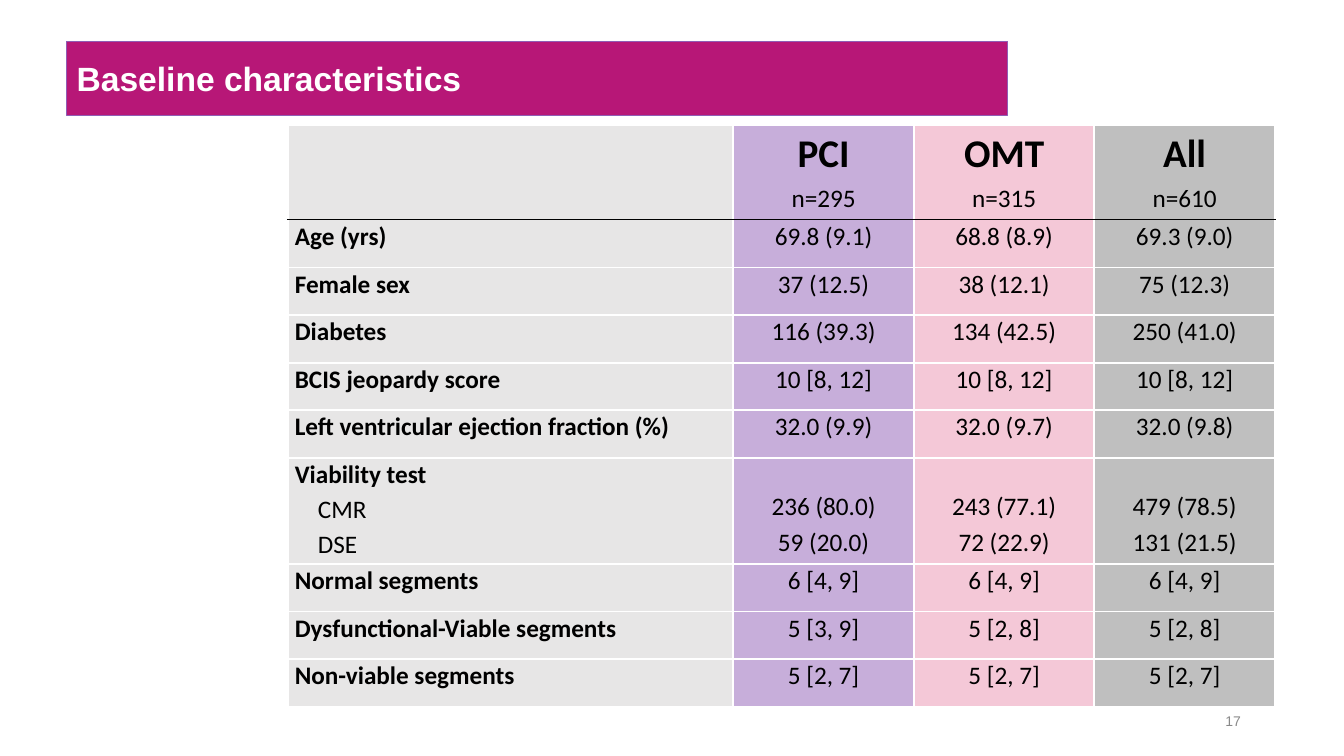
from lxml import etree
from pptx import Presentation
from pptx import util as u
from pptx.dml.color import RGBColor
from pptx.enum import text
from pptx.oxml.ns import qn

COLOURS = {
    "title": "B71777", "title_line": "8F5DB5", "white": "FFFFFF",
    "black": "000000", "number": "898989", "label": "E7E6E6",
    "pci": "C7AEDA", "omt": "F4C8D7", "all": "BFBFBF",
}
COLUMN_FILLS = ["label", "pci", "omt", "all"]
COLUMN_WIDTHS = [11.23, 4.55, 4.55, 4.55]
HEADER_HEIGHT, ROW_HEIGHT, VIABILITY_HEIGHT = 2.39, 1.2, 2.67

HEADER = ["", "PCI\nn=295", "OMT\nn=315", "All\nn=610"]
ROWS = [
    ["Age (yrs)", "69.8 (9.1)", "68.8 (8.9)", "69.3 (9.0)"],
    ["Female sex", "37 (12.5)", "38 (12.1)", "75 (12.3)"],
    ["Diabetes", "116 (39.3)", "134 (42.5)", "250 (41.0)"],
    ["BCIS jeopardy score", "10 [8, 12]", "10 [8, 12]", "10 [8, 12]"],
    ["Left ventricular ejection fraction (%)", "32.0 (9.9)", "32.0 (9.7)", "32.0 (9.8)"],
    ["Viability test\nCMR\nDSE", "236 (80.0)\n59 (20.0)", "243 (77.1)\n72 (22.9)",
     "479 (78.5)\n131 (21.5)"],
    ["Normal segments", "6 [4, 9]", "6 [4, 9]", "6 [4, 9]"],
    ["Dysfunctional-Viable segments", "5 [3, 9]", "5 [2, 8]", "5 [2, 8]"],
    ["Non-viable segments", "5 [2, 7]", "5 [2, 7]", "5 [2, 7]"],
]


def colour(name):
    return RGBColor.from_string(COLOURS[name])


def format_runs(paragraph, size, colour_name, bold=False, font="Calibri"):
    for run in paragraph.runs:
        run.font.name = font
        run.font.size = u.Pt(size)
        run.font.bold = bold
        run.font.color.rgb = colour(colour_name)


def clear_margins(frame):
    frame.margin_left = frame.margin_right = u.Cm(0)
    frame.margin_top = frame.margin_bottom = u.Cm(0)


def add_title(slide, left, top, width, height):
    title = slide.shapes.title
    title.left, title.top, title.width, title.height = map(u.Cm, (left, top, width, height))
    title.fill.solid()
    title.fill.fore_color.rgb = colour("title")
    title.line.color.rgb = colour("title_line")
    title.line.width = u.Pt(0.75)
    frame = title.text_frame
    frame.text = "Baseline characteristics"
    clear_margins(frame)
    frame.margin_left = u.Cm(0.25)
    frame.word_wrap = True
    frame.auto_size = text.MSO_AUTO_SIZE.NONE
    frame.vertical_anchor = text.MSO_ANCHOR.MIDDLE
    frame.paragraphs[0].alignment = text.PP_ALIGN.LEFT
    format_runs(frame.paragraphs[0], 24, "white", bold=True, font="Arial")


def add_border(cell, side, colour_name, width):
    line = etree.SubElement(cell._tc.get_or_add_tcPr(), qn("a:ln" + side), w=str(u.Pt(width)))
    fill = etree.SubElement(line, qn("a:solidFill"))
    etree.SubElement(fill, qn("a:srgbClr"), val=COLOURS[colour_name])


def style_cell(cell, row, column):
    # Black rule under the header, white lines elsewhere
    for side in "LRTB":
        under_header = (row, side) in [(0, "B"), (1, "T")]
        add_border(cell, side, *(("black", 1) if under_header else ("white", 1.5)))
    cell.fill.solid()
    cell.fill.fore_color.rgb = colour(COLUMN_FILLS[column])
    clear_margins(cell)
    cell.margin_top = u.Cm(0.13 if row == 0 else 0.04)
    cell.vertical_anchor = text.MSO_ANCHOR.TOP


def fill_label(cell):
    cell.margin_left = u.Cm(0.18)
    for index, paragraph in enumerate(cell.text_frame.paragraphs):
        paragraph.alignment = text.PP_ALIGN.LEFT
        format_runs(paragraph, 18, "black", bold=index == 0)
        if index:
            paragraph.line_spacing = u.Pt(25)
            paragraph._p.get_or_add_pPr().set("marL", str(u.Cm(0.58)))


def fill_values(cell, is_header):
    paragraphs = cell.text_frame.paragraphs
    if len(paragraphs) > 1 and not is_header:
        cell.margin_top = u.Cm(0.85)  # start beside the second label line
    for index, paragraph in enumerate(paragraphs):
        paragraph.alignment = text.PP_ALIGN.CENTER
        is_group = is_header and index == 0
        format_runs(paragraph, 28 if is_group else 18, "black", bold=is_group)
        if index:
            paragraph.space_before = u.Pt(4.2 if is_header else 3.4)


def add_characteristics_table(slide, left, top):
    contents = [HEADER] + ROWS
    heights = [HEADER_HEIGHT] + [
        VIABILITY_HEIGHT if "\n" in row[0] else ROW_HEIGHT for row in ROWS]
    frame = slide.shapes.add_table(
        len(contents), len(HEADER), u.Cm(left), u.Cm(top),
        u.Cm(sum(COLUMN_WIDTHS)), u.Cm(sum(heights)))
    table = frame.table
    table.horz_banding = False
    for column, width in zip(table.columns, COLUMN_WIDTHS):
        column.width = u.Cm(width)
    for row, height in zip(table.rows, heights):
        row.height = u.Cm(height)
    for row, values in enumerate(contents):
        for column, value in enumerate(values):
            cell = table.cell(row, column)
            style_cell(cell, row, column)
            cell.text_frame.text = value
            if column == 0:
                fill_label(cell)
            else:
                fill_values(cell, row == 0)


def add_page_number(slide, left, top, width, height):
    box = slide.shapes.add_textbox(*map(u.Cm, (left, top, width, height)))
    frame = box.text_frame
    clear_margins(frame)
    frame.text = "17"
    format_runs(frame.paragraphs[0], 10, "number", font="Arial")


def main():
    presentation = Presentation()
    presentation.slide_width = u.Cm(33.87)
    presentation.slide_height = u.Cm(19.05)
    slide = presentation.slides.add_slide(presentation.slide_layouts[5])
    add_page_number(slide, 30.88, 17.96, 0.46, 0.48)
    add_characteristics_table(slide, 7.25, 3.15)
    add_title(slide, 1.68, 1.04, 23.72, 1.86)
    presentation.save("out.pptx")


if __name__ == "__main__":
    main()
